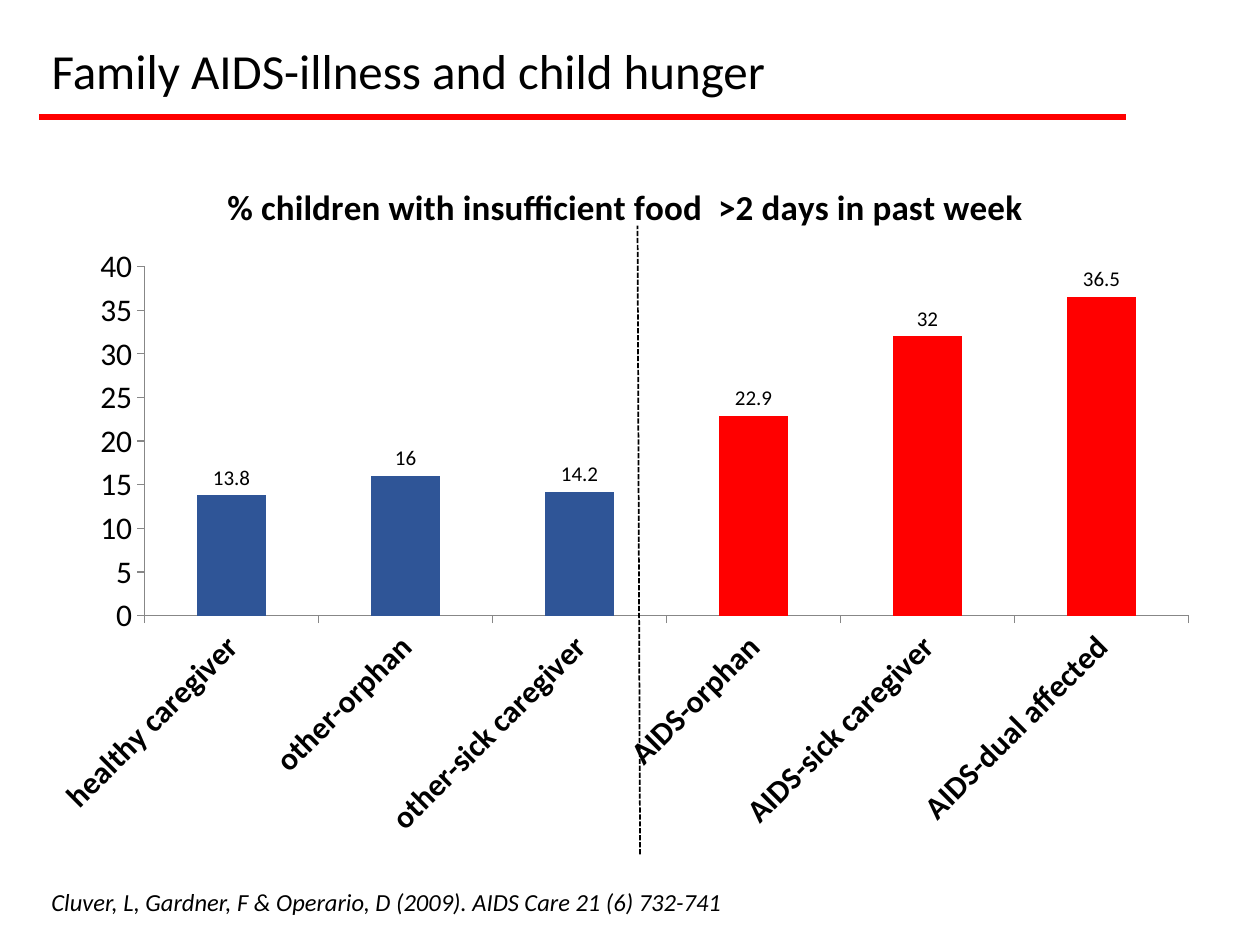
from lxml.etree import SubElement
from pptx import Presentation
from pptx.chart.data import CategoryChartData
from pptx.dml.color import RGBColor
from pptx.enum.chart import XL_CHART_TYPE, XL_LABEL_POSITION, XL_TICK_MARK
from pptx.enum.dml import MSO_LINE
from pptx.enum.shapes import MSO_CONNECTOR
from pptx.enum.text import MSO_ANCHOR, MSO_AUTO_SIZE, PP_ALIGN
from pptx.oxml import parse_xml
from pptx.oxml.ns import nsdecls, qn
from pptx.util import Inches, Pt

BLACK = RGBColor(0x00, 0x00, 0x00)
RED = RGBColor(0xFF, 0x00, 0x00)
BLUE = RGBColor(0x2F, 0x55, 0x97)
GREY = RGBColor(0x87, 0x87, 0x87)
FACE = "Calibri"
WIDE, HIGH = 10, 7.5
LEFT = 3.1
BARS = {
    "healthy caregiver": (13.8, BLUE),
    "other-orphan": (16, BLUE),
    "other-sick caregiver": (14.2, BLUE),
    "AIDS-orphan": (22.9, RED),
    "AIDS-sick caregiver": (32, RED),
    "AIDS-dual affected": (36.5, RED),
}


def share(x, y):
    """Turn percentages of the slide's width and height into lengths."""
    return Inches(WIDE * x / 100), Inches(HIGH * y / 100)


def style(font, size, bold=False, italic=False, color=BLACK):
    """Format a font."""
    font.name, font.size = FACE, Pt(size)
    font.bold, font.italic = bold, italic
    font.color.rgb = color


def write(frame, text, size, spacing=None, anchor=MSO_ANCHOR.TOP, **look):
    """Put one formatted line of text in a frame."""
    frame.word_wrap = True
    frame.auto_size = MSO_AUTO_SIZE.NONE
    frame.vertical_anchor = anchor
    line = frame.paragraphs[0]
    line.alignment, line.line_spacing = PP_ALIGN.LEFT, spacing
    run = line.add_run()
    run.text = text
    style(run.font, size, **look)


def add_title(slide, text):
    """Place and fill the title."""
    title = slide.shapes.title
    title.left, title.top = share(LEFT, 4)
    title.width, title.height = share(90, 7.5)
    write(title.text_frame, text, 28, spacing=0.9, anchor=MSO_ANCHOR.MIDDLE)


def add_note(slide, text):
    """Add the citation at the foot."""
    box = slide.shapes.add_textbox(*share(LEFT, 93.2), *share(64.8, 4.5))
    write(box.text_frame, text, 14, italic=True)


def add_rule(slide, start, end, color, weight, dash=None):
    """Draw a straight line between two points."""
    rule = slide.shapes.add_connector(
        MSO_CONNECTOR.STRAIGHT, *share(*start), *share(*end))
    rule.line.color.rgb, rule.line.width = color, Pt(weight)
    if dash:
        rule.line.dash_style = dash
    SubElement(rule._element.spPr, qn("a:effectLst"))


def set_axis(axis, bold=False):
    """Format one chart axis."""
    axis.has_major_gridlines = False
    axis.major_tick_mark = XL_TICK_MARK.OUTSIDE
    axis.minor_tick_mark = XL_TICK_MARK.NONE
    axis.format.line.color.rgb = GREY
    axis.format.line.width = Pt(0.75)
    style(axis.tick_labels.font, 18, bold=bold)


def fix_plot(chart, **frame):
    """Pin the inner plot area to shares of the chart."""
    area = chart._chartSpace.chart.plotArea
    for old in area.findall(qn("c:layout")):
        area.remove(old)
    sizes = "".join(f'<c:{key} val="{val}"/>' for key, val in frame.items())
    area.insert(0, parse_xml(
        f'<c:layout {nsdecls("c")}><c:manualLayout>'
        '<c:layoutTarget val="inner"/><c:xMode val="edge"/>'
        f'<c:yMode val="edge"/>{sizes}</c:manualLayout></c:layout>'))


def add_bars(slide, title):
    """Add the column chart."""
    data = CategoryChartData()
    data.categories = list(BARS)
    data.add_series("Series 1", [val for val, _ in BARS.values()])
    chart = slide.shapes.add_chart(
        XL_CHART_TYPE.COLUMN_CLUSTERED, *share(LEFT, 16.4),
        *share(93.1, 73.87), data).chart
    style(chart.font, 10)
    chart.has_legend = False
    chart.has_title = True
    head = chart.chart_title.text_frame
    head.text = title
    style(head.paragraphs[0].runs[0].font, 20, bold=True)
    chart.chart_title.include_in_layout = False
    set_axis(chart.category_axis, bold=True)
    chart.category_axis._element.txPr.bodyPr.set("rot", "-2700000")
    set_axis(chart.value_axis)
    chart.value_axis.minimum_scale = 0
    chart.value_axis.maximum_scale = 40
    chart.value_axis.major_unit = 5
    plot = chart.plots[0]
    plot.gap_width, plot.vary_by_categories = 150, False
    plot.has_data_labels = True
    tags = plot.data_labels
    tags.show_value, tags.position = True, XL_LABEL_POSITION.OUTSIDE_END
    style(tags.font, 12)
    for spot, (_, color) in enumerate(BARS.values()):
        fill = plot.series[0].points[spot].format.fill
        fill.solid()
        fill.fore_color.rgb = color
    fix_plot(chart, x=0.09, y=0.16, w=0.89, h=0.5)


def main():
    """Build and save the slide."""
    deck = Presentation()
    deck.slide_width, deck.slide_height = Inches(WIDE), Inches(HIGH)
    slide = deck.slides.add_slide(deck.slide_layouts[5])
    add_bars(slide, "% children with insufficient food  >2 days in past week")
    add_rule(slide, (50.8, 90.4), (50.6, 23.87), BLACK, 1,
             MSO_LINE.SQUARE_DOT)
    add_note(slide, "Cluver, L, Gardner, F & Operario, D (2009). "
                    "AIDS Care 21 (6) 732-741")
    add_rule(slide, (LEFT, 12.4), (89.4, 12.4), RED, 3.25)
    add_title(slide, "Family AIDS-illness and child hunger")
    deck.save("out.pptx")


if __name__ == "__main__":
    main()
